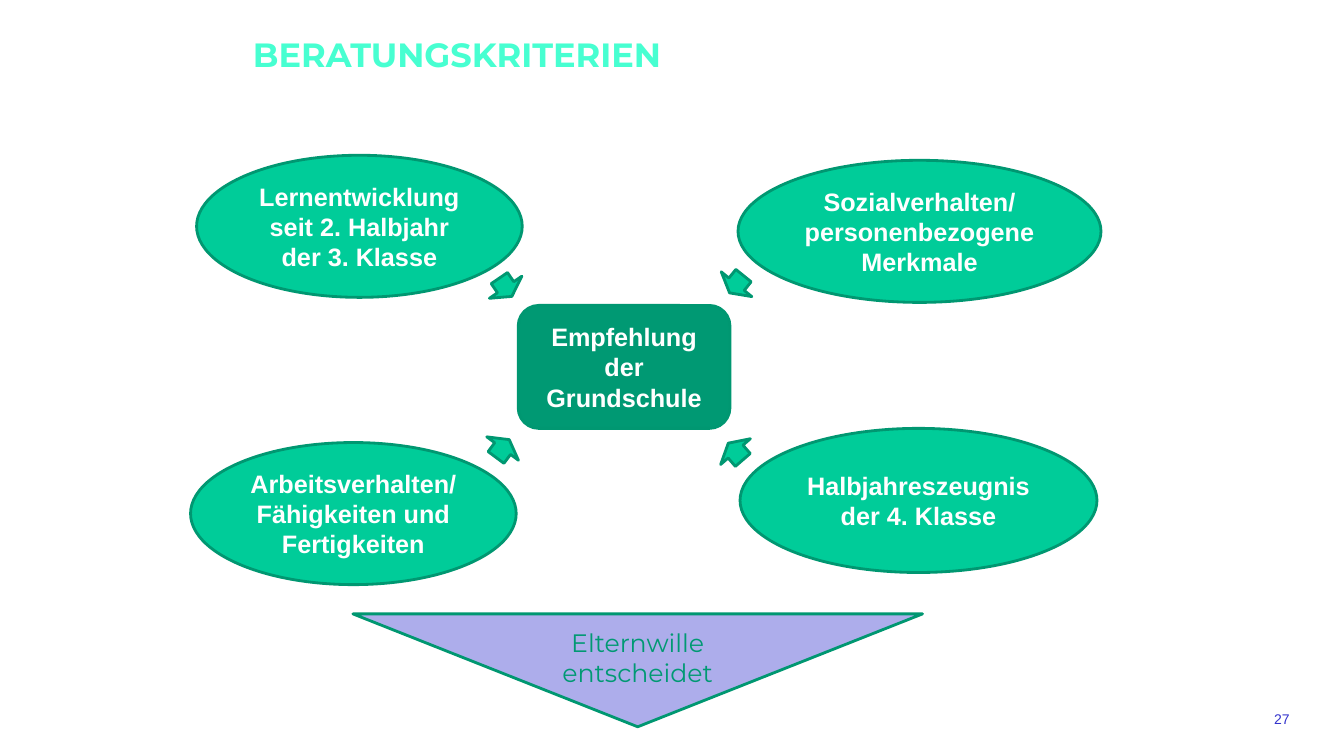
from pptx import Presentation
from pptx.dml.color import RGBColor
from pptx.enum.shapes import MSO_SHAPE as Kind
from pptx.enum.text import MSO_ANCHOR as Anchor, PP_ALIGN as Align
from pptx.util import Inches, Pt

WHITE = RGBColor(0xFF, 0xFF, 0xFF)
MINT = RGBColor(0x47, 0xFF, 0xD1)
GREEN = RGBColor(0x00, 0xCC, 0x99)
DARK = RGBColor(0x00, 0x99, 0x73)
EDGE = RGBColor(0x00, 0x97, 0x71)
LILAC = RGBColor(0xAD, 0xAD, 0xEB)
BLUE = RGBColor(0x33, 0x33, 0xCC)


class Board:
    """Holds the label style and the current slide."""

    label = {"name": "Arial", "size": Pt(18), "bold": True}

    def __init__(self, slide):
        self.slide = slide

    def fill_in(self, frame, words, color, align, anchor, style):
        frame.word_wrap = True
        frame.vertical_anchor = anchor
        para = frame.paragraphs[0]
        para.alignment = align
        run = para.add_run()
        run.text = words
        for key, value in {**self.label, **style}.items():
            setattr(run.font, key, value)
        run.font.color.rgb = color

    def text(self, box, words, color, align=Align.LEFT, **style):
        item = self.slide.shapes.add_textbox(*map(Inches, box))
        self.fill_in(item.text_frame, words, color, align, Anchor.TOP, style)

    def shape(self, kind, box, fill=GREEN, turn=0):
        item = self.slide.shapes.add_shape(kind, *map(Inches, box))
        item.shadow.inherit = False
        item.rotation = turn
        item.fill.solid()
        item.fill.fore_color.rgb = fill
        item.line.color.rgb = EDGE
        item.line.width = Pt(2)
        return item

    def node(self, kind, box, words, fill=GREEN, color=WHITE, **style):
        item = self.shape(kind, box, fill)
        self.fill_in(item.text_frame, words, color, Align.CENTER, Anchor.MIDDLE, style)
        return item


def main():
    deck = Presentation()
    deck.slide_width, deck.slide_height = Inches(13.33), Inches(7.5)
    board = Board(deck.slides.add_slide(deck.slide_layouts[6]))

    # Title and page number
    board.text((2.41, 0.29, 7.73, 0.76), "BERATUNGSKRITERIEN", MINT,
               name="Montserrat", size=Pt(24))
    board.text((9.56, 7, 3.33, 0.33), "27", BLUE, Align.RIGHT,
               size=Pt(10), bold=False)

    # Small arrows between the criteria and the centre
    for left, top, turn in ((4.82, 2.74, 325.7), (7.11, 2.71, 39),
                            (4.79, 4.34, 216.5), (7.1, 4.37, 139.1)):
        board.shape(Kind.DOWN_ARROW, (left, top, 0.39, 0.22), turn=turn)

    # Parents' decision, with its text set low in the triangle
    choice = board.node(Kind.FLOWCHART_MERGE, (3.5, 6.09, 5.65, 1.12),
                        "Elternwille entscheidet", LILAC, DARK,
                        name="Montserrat", bold=False)
    choice.text_frame.margin_top = Inches(0.35)

    # Recommendation in the centre
    board.node(Kind.ROUNDED_RECTANGLE, (5.14, 3.03, 2.1, 1.22),
               "Empfehlung der Grundschule", DARK)

    # Four criteria
    for box, words in (
        ((1.95, 1.54, 3.23, 1.41), "Lernentwicklung seit 2. Halbjahr der 3. Klasse"),
        ((7.34, 4.25, 3.54, 1.43), "Halbjahreszeugnis der 4. Klasse"),
        ((1.89, 4.39, 3.23, 1.41), "Arbeitsverhalten/Fähigkeiten und Fertigkeiten"),
        ((7.32, 1.59, 3.6, 1.41), "Sozialverhalten/ personenbezogene Merkmale"),
    ):
        board.node(Kind.OVAL, box, words)

    deck.save("out.pptx")


if __name__ == "__main__":
    main()
